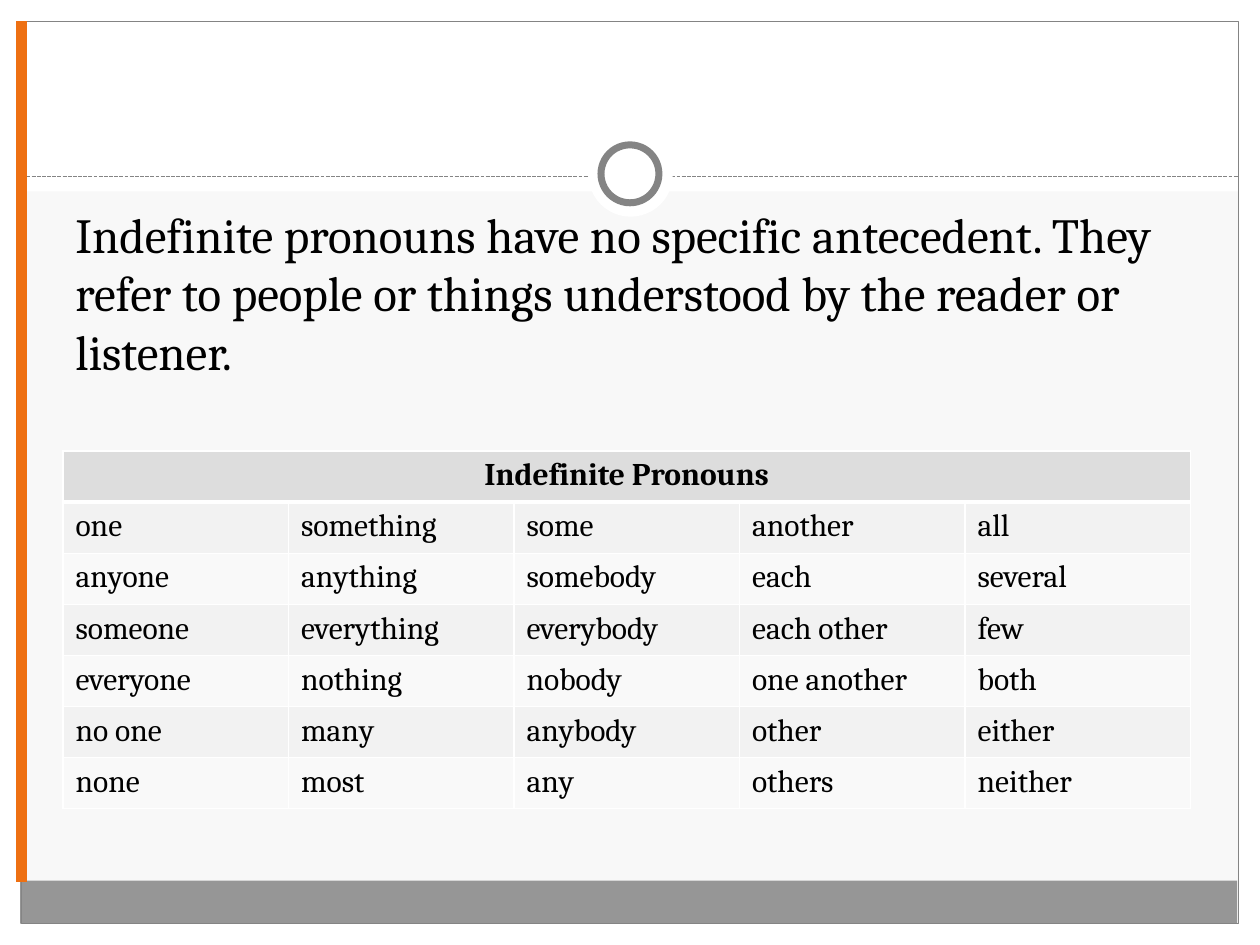
from lxml.etree import SubElement
from pptx import Presentation
from pptx.dml.color import RGBColor
from pptx.enum.dml import MSO_LINE
from pptx.enum.shapes import MSO_CONNECTOR, MSO_SHAPE
from pptx.enum.text import MSO_ANCHOR, PP_ALIGN
from pptx.oxml.ns import qn
from pptx.util import Inches, Pt

COLORS = {
    "background": "F8F8F8",
    "white": "FFFFFF",
    "footer": "969696",
    "outline": "848484",
    "accent": "EE7012",
    "text": "000000",
    "header": "DDDDDD",
    "odd": "F2F2F2",
    "even": "F9F9F9",
}

DEFINITION = (
    "Indefinite pronouns have no specific antecedent. They refer to people "
    "or things understood by the reader or listener."
)

PRONOUNS = [
    ["one", "something", "some", "another", "all"],
    ["anyone", "anything", "somebody", "each", "several"],
    ["someone", "everything", "everybody", "each other", "few"],
    ["everyone", "nothing", "nobody", "one another", "both"],
    ["no one", "many", "anybody", "other", "either"],
    ["none", "most", "any", "others", "neither"],
]


class SlideBuilder:
    font = "Cambria"

    def __init__(self, slide):
        self.s = slide

    def color(self, name):
        return RGBColor.from_string(COLORS[name])

    def background(self, name):
        fill = self.s.background.fill
        fill.solid()
        fill.fore_color.rgb = self.color(name)

    def shape(self, kind, left, top, width, height, fill=None, line=None, weight=0.75):
        sp = self.s.shapes.add_shape(
            kind, Inches(left), Inches(top), Inches(width), Inches(height)
        )
        sp.shadow.inherit = False
        if fill:
            sp.fill.solid()
            sp.fill.fore_color.rgb = self.color(fill)
        else:
            sp.fill.background()
        if line:
            sp.line.color.rgb = self.color(line)
            sp.line.width = Pt(weight)
        else:
            sp.line.fill.background()

    def line(self, x1, y1, x2, y2, color, weight, dash=None):
        cxn = self.s.shapes.add_connector(
            MSO_CONNECTOR.STRAIGHT, Inches(x1), Inches(y1), Inches(x2), Inches(y2)
        )
        cxn.line.color.rgb = self.color(color)
        cxn.line.width = Pt(weight)
        if dash:
            cxn.line.dash_style = dash
        SubElement(cxn._element.spPr, qn("a:effectLst"))

    def style(self, p, size, bold=False):
        for r in p.runs:
            r.font.name = self.font
            r.font.size = Pt(size)
            r.font.bold = bold
            r.font.color.rgb = self.color("text")

    def text(self, text, left, top, width, height, size):
        sp = self.s.shapes.add_textbox(
            Inches(left), Inches(top), Inches(width), Inches(height)
        )
        tf = sp.text_frame
        tf.word_wrap = True
        tf.vertical_anchor = MSO_ANCHOR.BOTTOM
        tf.text = text
        self.style(tf.paragraphs[0], size)

    def borders(self, cell, **weights):
        tcPr = cell._tc.get_or_add_tcPr()
        for side in "LRTB":
            width = Pt(weights.get(side, 1))
            ln = SubElement(tcPr, qn(f"a:ln{side}"), w=str(width))
            fill = SubElement(ln, qn("a:solidFill"))
            SubElement(fill, qn("a:srgbClr"), val=COLORS["white"])

    def cell(self, cell, text, fill, bold=False, **weights):
        self.borders(cell, **weights)
        cell.fill.solid()
        cell.fill.fore_color.rgb = self.color(fill)
        cell.text = text
        self.style(cell.text_frame.paragraphs[0], 18, bold)

    def table(self, title, rows, left, top, width, height):
        n_rows, n_cols = len(rows) + 1, len(rows[0])
        table = self.s.shapes.add_table(
            n_rows, n_cols, Inches(left), Inches(top), Inches(width), Inches(height)
        ).table
        header = table.cell(0, 0)
        header.merge(table.cell(0, n_cols - 1))
        for j in range(n_cols):
            self.cell(table.cell(0, j), "" if j else title, "header", True, B=3)
        header.text_frame.paragraphs[0].alignment = PP_ALIGN.CENTER
        for i, row in enumerate(rows, 1):
            for j, word in enumerate(row):
                fill = "odd" if i % 2 else "even"
                self.cell(table.cell(i, j), word, fill, T=3 if i == 1 else 1)


def main():
    prs = Presentation()
    prs.slide_width, prs.slide_height = Inches(10), Inches(7.5)
    b = SlideBuilder(prs.slides.add_slide(prs.slide_layouts[6]))
    rect, oval = MSO_SHAPE.RECTANGLE, MSO_SHAPE.OVAL

    b.background("background")
    for box in [
        (0, 7.33, 10, 0.17),
        (0, 0, 10, 1.52),
        (0, 0, 0.17, 7.5),
        (9.83, 0, 0.17, 7.5),
    ]:
        b.shape(rect, *box, fill="white")
    b.shape(rect, 0.16, 6.99, 9.66, 0.34, fill="footer")
    b.shape(rect, 0.17, 0.17, 9.66, 7.16, line="outline")
    b.line(0.17, 1.4, 9.83, 1.4, "outline", 0.75, MSO_LINE.SQUARE_DOT)
    b.shape(oval, 4.67, 1.05, 0.67, 0.67, fill="white")
    b.shape(oval, 4.77, 1.15, 0.46, 0.46, fill="white", line="outline", weight=4)

    b.text(DEFINITION, 0.5, 1.67, 8.95, 1.4, 28)
    b.table("Indefinite Pronouns", PRONOUNS, 0.5, 3.58, 8.95, 2.84)
    b.line(0.17, 0.17, 0.17, 7, "accent", 6)

    prs.save("out.pptx")


if __name__ == "__main__":
    main()
